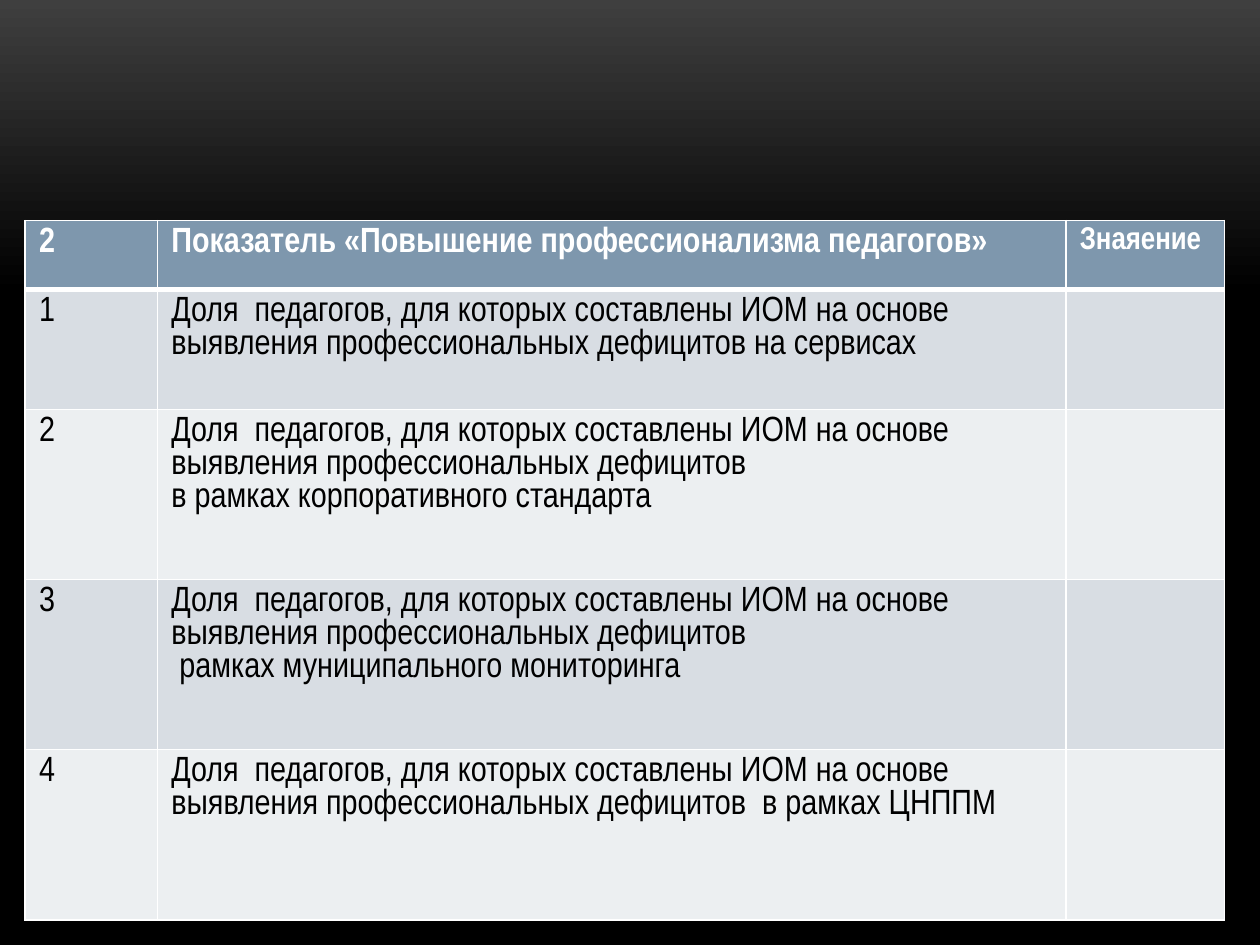
from lxml.etree import SubElement
from pptx import Presentation
from pptx.dml.color import RGBColor
from pptx.oxml.ns import qn
from pptx.util import Inches, Pt

SHARE = "Доля  педагогов, для которых составлены ИОМ на основе выявления профессиональных дефицитов"
HEADER = ["2", "Показатель «Повышение профессионализма педагогов»", "Знаяение"]
INDICATORS = [
    [SHARE + " на сервисах"],
    [SHARE, "в рамках корпоративного стандарта"],
    [SHARE, " рамках муниципального мониторинга"],
    [SHARE + "  в рамках ЦНППМ"],
]
COLUMN_WIDTHS = [1.05, 7.21, 1.26]
ROW_HEIGHTS = [0.55, 0.95, 1.35, 1.35, 1.35]
THEME = {
    "font": "Arial Narrow",
    "size": 20,
    "small": 18,
    "header": "7E97AD",
    "bands": ["D8DDE3", "ECEFF1"],
    "line": "FFFFFF",
    "header_text": "FFFFFF",
    "text": "000000",
    "background": [(0, "3F3F3F"), (0.31, "000000")],
}


def paint_background(slide):
    fill = slide.background.fill
    fill.gradient()
    fill.gradient_angle = 270
    for stop, (position, color) in zip(fill.gradient_stops, THEME["background"]):
        stop.position = position
        stop.color.rgb = RGBColor.from_string(color)


def add_borders(cell, top, bottom):
    properties = cell._tc.get_or_add_tcPr()
    for side, width in (("L", 1), ("R", 1), ("T", top), ("B", bottom)):
        line = SubElement(properties, qn(f"a:ln{side}"), w=str(Pt(width)))
        SubElement(SubElement(line, qn("a:solidFill")), qn("a:srgbClr"), val=THEME["line"])


def write_cell(cell, lines, size, color, bold):
    cell.margin_left = cell.margin_right = Inches(0.11)
    cell.margin_top = cell.margin_bottom = Inches(0.05)
    for index, line in enumerate(lines):
        frame = cell.text_frame
        paragraph = frame.add_paragraph() if index else frame.paragraphs[0]
        run = paragraph.add_run()
        run.text = line
        run.font.name = THEME["font"]
        run.font.size = Pt(size)
        run.font.bold = bold
        run.font.color.rgb = RGBColor.from_string(color)


def add_indicator_table(slide):
    rows = [[[label] for label in HEADER]]
    rows += [[[str(number)], lines, []] for number, lines in enumerate(INDICATORS, 1)]
    table = slide.shapes.add_table(
        len(rows), len(HEADER), Inches(0.2), Inches(1.75),
        Inches(sum(COLUMN_WIDTHS)), Inches(sum(ROW_HEIGHTS)),
    ).table
    for column, width in zip(table.columns, COLUMN_WIDTHS):
        column.width = Inches(width)
    for row_index, cells in enumerate(rows):
        table.rows[row_index].height = Inches(ROW_HEIGHTS[row_index])
        is_header = row_index == 0
        background = THEME["header"] if is_header else THEME["bands"][(row_index - 1) % 2]
        color = THEME["header_text"] if is_header else THEME["text"]
        for column_index, lines in enumerate(cells):
            cell = table.cell(row_index, column_index)
            size = THEME["small"] if is_header and column_index == 2 else THEME["size"]
            add_borders(cell, 3 if row_index == 1 else 1, 3 if is_header else 1)
            cell.fill.solid()
            cell.fill.fore_color.rgb = RGBColor.from_string(background)
            write_cell(cell, lines, size, color, is_header)


def main():
    presentation = Presentation()
    presentation.slide_width = Inches(10)
    presentation.slide_height = Inches(7.5)
    slide = presentation.slides.add_slide(presentation.slide_layouts[6])
    paint_background(slide)
    add_indicator_table(slide)
    presentation.save("out.pptx")


if __name__ == "__main__":
    main()
